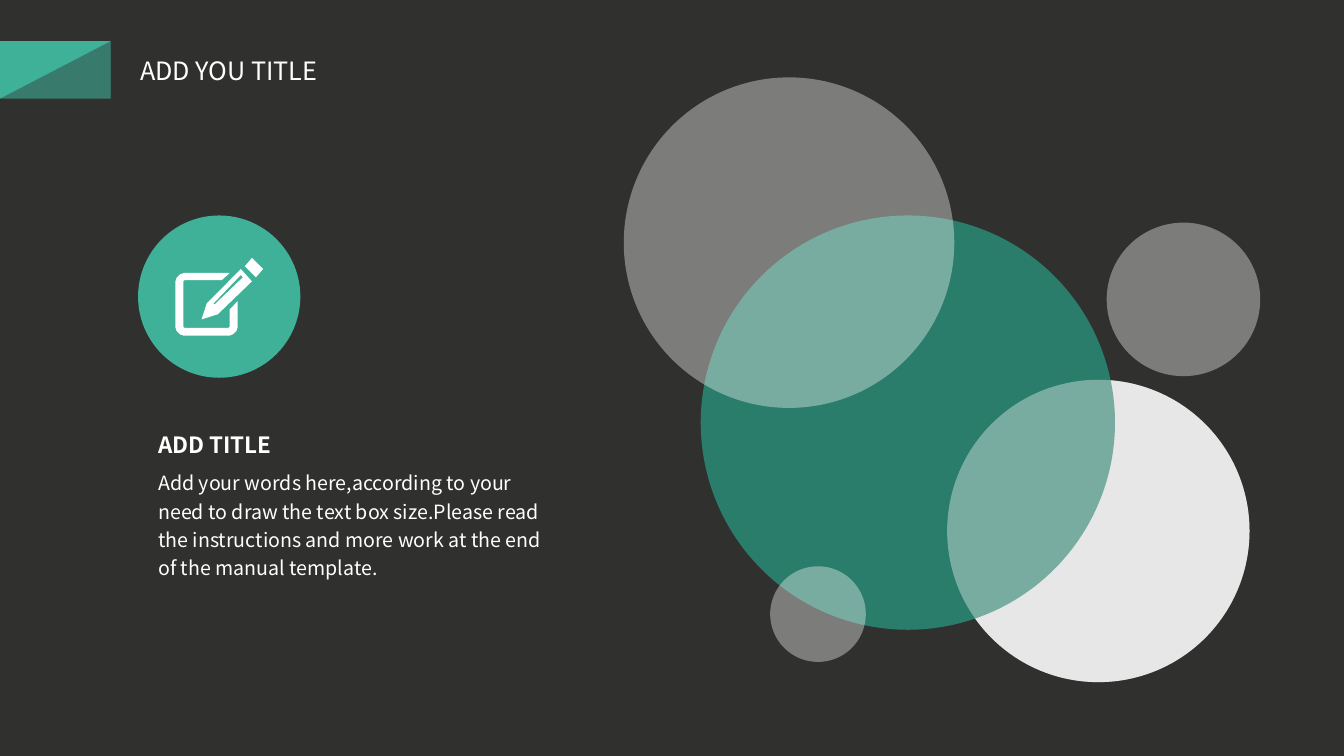
from math import cos, radians, sin

from lxml.etree import SubElement
from pptx import Presentation
from pptx.dml.color import RGBColor
from pptx.enum.shapes import MSO_SHAPE
from pptx.enum.text import MSO_ANCHOR, MSO_AUTO_SIZE, PP_ALIGN
from pptx.oxml.ns import qn
from pptx.util import Cm, Pt

FONT = "Noto Sans CJK JP"
DARK, WHITE, MINT, GREEN, GREY = "30302F", "FFFFFF", "3EB198", "2B7D6B", "D9D9D9"
BODY = (
    "Add your words here,according to your need to draw the text box size."
    "Please read the instructions and more work at the end of the manual template."
)


def colour(code):
    """Turn a hex string into a colour."""
    return RGBColor.from_string(code)


def corners(left, top, right, bottom, radius):
    """List the rounded corners from bottom right over bottom left to top left."""
    centres = (
        (right - radius, bottom - radius),
        (left + radius, bottom - radius),
        (left + radius, top + radius),
    )
    return [
        (x + radius * cos(radians(angle)), y + radius * sin(radians(angle)))
        for turn, (x, y) in enumerate(centres)
        for angle in range(90 * turn, 90 * turn + 91, 10)
    ]


class Slide:
    """Holds the style and the current slide."""

    def __init__(self, deck):
        """Add a title-only slide with a dark background."""
        self.page = deck.slides.add_slide(deck.slide_layouts[5])
        self.page.background.fill.solid()
        self.page.background.fill.fore_color.rgb = colour(DARK)

    def group(self):
        """Add an empty group and return its shapes."""
        return self.page.shapes.add_group_shape().shapes

    def paint(self, shape, code, opacity=100):
        """Give a shape a plain fill without line or shadow."""
        shape.shadow.inherit = False
        shape.line.fill.background()
        shape.fill.solid()
        shape.fill.fore_color.rgb = colour(code)
        if opacity < 100:
            tone = shape._element.spPr.find(qn("a:solidFill"))[0]
            SubElement(tone, qn("a:alpha"), val=str(opacity * 1000))

    def preset(self, kind, left, top, width, height, code, opacity=100, parent=None):
        """Add a preset shape, placed in centimetres."""
        shapes = self.page.shapes if parent is None else parent
        shape = shapes.add_shape(kind, Cm(left), Cm(top), Cm(width), Cm(height))
        self.paint(shape, code, opacity)
        return shape

    def circle(self, left, top, size, code, opacity=100):
        """Add a circle."""
        return self.preset(MSO_SHAPE.OVAL, left, top, size, size, code, opacity)

    def outline(self, parent, code, *contours):
        """Add a closed outline given in hundredths of a centimetre."""
        builder = parent.build_freeform(*contours[0][0], scale=Cm(0.01))
        builder.add_line_segments(contours[0][1:])
        for contour in contours[1:]:
            builder.move_to(*contour[0])
            builder.add_line_segments(contour[1:])
        self.paint(builder.convert_to_shape(), code)

    def fill_text(self, box, text, size, bold=False, spacing=1.0):
        """Fill a box with one left-aligned white paragraph."""
        frame = box.text_frame
        frame.text = text
        frame.word_wrap = True
        frame.auto_size = MSO_AUTO_SIZE.NONE
        frame.vertical_anchor = MSO_ANCHOR.TOP
        para = frame.paragraphs[0]
        para.alignment = PP_ALIGN.LEFT
        para.line_spacing = spacing
        font = para.runs[0].font
        font.name, font.size, font.bold = FONT, Pt(size), bold
        font.color.rgb = colour(WHITE)

    def title(self, text, left, top, width, height):
        """Place and fill the title."""
        box = self.page.shapes.title
        box.left, box.top, box.width, box.height = map(Cm, (left, top, width, height))
        self.fill_text(box, text, 18)

    def text(self, text, left, top, width, height, size, bold=False, spacing=1.0):
        """Add a text box without margins."""
        box = self.page.shapes.add_textbox(Cm(left), Cm(top), Cm(width), Cm(height))
        frame = box.text_frame
        frame.margin_left = frame.margin_right = Cm(0)
        frame.margin_top = frame.margin_bottom = Cm(0)
        self.fill_text(box, text, size, bold, spacing)


def main():
    """Build the slide and save it."""
    deck = Presentation()
    deck.slide_width, deck.slide_height = Cm(33.87), Cm(19.05)
    slide = Slide(deck)

    banner = slide.group()
    banner_area = (0, 1.04, 2.79, 1.45)
    slide.preset(MSO_SHAPE.RECTANGLE, *banner_area, MINT, parent=banner)
    fold = slide.preset(MSO_SHAPE.RIGHT_TRIANGLE, *banner_area, DARK, 42, banner)
    fold._element.spPr.find(qn("a:xfrm")).set("flipH", "1")
    slide.title("ADD YOU TITLE", 3.28, 1.27, 5.33, 1.02)

    for left, top, size, code, opacity in (
        (23.87, 9.57, 7.62, GREY, 100),
        (17.66, 5.43, 10.44, GREEN, 100),
        (23.87, 9.57, 7.62, WHITE, 37),
        (27.89, 5.61, 3.87, WHITE, 37),
        (19.41, 14.27, 2.41, WHITE, 37),
        (15.72, 1.95, 8.33, WHITE, 37),
        (3.48, 5.43, 4.09, MINT, 100),
    ):
        slide.circle(left, top, size, code, opacity)

    icon = slide.group()
    inner = corners(462, 706, 579, 826, 5)
    outer = corners(442, 688, 599, 846, 25)
    sheet = inner + [(559, 706), (579, 688)] + outer[::-1] + [(599, 759), (579, 780)]
    pencil = [(635, 709), (607, 678), (521, 765), (508, 805), (549, 792)]
    groove = [(541, 767), (538, 765), (607, 693), (612, 699)]
    eraser = [(617, 671), (645, 699), (663, 678), (635, 650)]
    slide.outline(icon, WHITE, sheet)
    slide.outline(icon, WHITE, pencil, groove)
    slide.outline(icon, WHITE, eraser)

    slide.text("ADD TITLE", 3.99, 10.87, 7.65, 0.69, 16, bold=True)
    slide.text(BODY, 3.99, 11.76, 10.11, 2.87, 14, spacing=1.2)
    deck.save("out.pptx")


if __name__ == "__main__":
    main()
